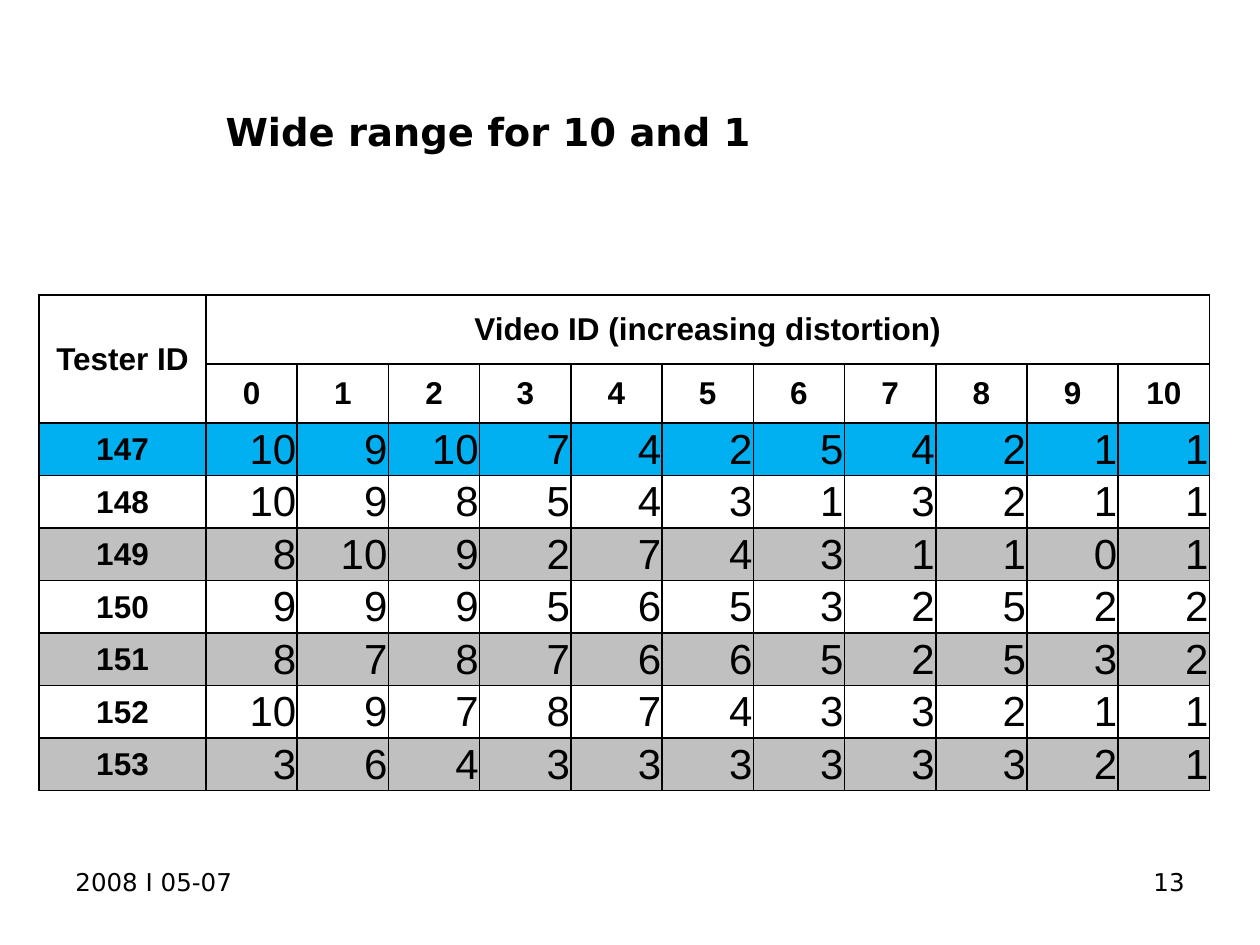
from lxml.etree import SubElement
from pptx import Presentation
from pptx.dml.color import RGBColor
from pptx.enum.text import MSO_ANCHOR as Anchor, PP_ALIGN as Align
from pptx.oxml.ns import qn
from pptx.util import Emu, Pt

EMU_PER_PX = 914400 / 126
COLORS = {"ink": "000000", "highlight": "00B0F0", "band": "C0C0C0"}

TITLE = {"name": "DejaVu Sans", "size": Pt(22), "bold": True}
FOOTER = {"name": "DejaVu Sans", "size": Pt(14), "bold": False}
HEADING = {"name": "Arial", "size": Pt(18), "bold": True}
SCORE = {"name": "Arial", "size": Pt(24), "bold": False}

# Scores by tester, one for each video from 0 to 10
RATINGS = {
    147: [10, 9, 10, 7, 4, 2, 5, 4, 2, 1, 1],
    148: [10, 9, 8, 5, 4, 3, 1, 3, 2, 1, 1],
    149: [8, 10, 9, 2, 7, 4, 3, 1, 1, 0, 1],
    150: [9, 9, 9, 5, 6, 5, 3, 2, 5, 2, 2],
    151: [8, 7, 8, 7, 6, 6, 5, 2, 5, 3, 2],
    152: [10, 9, 7, 8, 7, 4, 3, 3, 2, 1, 1],
    153: [3, 6, 4, 3, 3, 3, 3, 3, 3, 2, 1],
}
HIGHLIGHTED = 147
VIDEOS = range(11)
HEADER_HEIGHTS = [69, 59]
TESTER_WIDTH = 167


def px(length):
    return Emu(round(length * EMU_PER_PX))


def write(frame, text, style, align):
    para = frame.paragraphs[0]
    para.alignment = align
    span = para.add_run()
    span.text = text
    for name, value in style.items():
        setattr(span.font, name, value)
    span.font.color.rgb = RGBColor.from_string(COLORS["ink"])


def add_title(page, text, left, top, width, height):
    title = page.shapes.title
    title.left, title.top, title.width, title.height = map(px, (left, top, width, height))
    title.text_frame.vertical_anchor = Anchor.MIDDLE
    write(title.text_frame, text, TITLE, Align.LEFT)


def add_footer(page, text, left, align):
    box = page.shapes.add_textbox(px(left), px(861), px(294), px(66))
    box.text_frame.word_wrap = True
    write(box.text_frame, text, FOOTER, align)


def add_borders(cell, weights):
    properties = cell._tc.get_or_add_tcPr()
    for side, weight in weights.items():
        line = SubElement(properties, qn(f"a:ln{side}"), w=str(Pt(weight)))
        fill = SubElement(line, qn("a:solidFill"))
        SubElement(fill, qn("a:srgbClr"), val=COLORS["ink"])


def format_cell(cell, row, fill):
    layout = {"margin_left": px(1), "margin_top": px(1), "margin_right": px(1),
              "margin_bottom": 0, "vertical_anchor": Anchor.MIDDLE}
    for name, value in layout.items():
        setattr(cell, name, value)
    # The lines under the two header rows are heavier
    add_borders(cell, {"L": 1, "R": 1,
                       "T": 1.5 if row in (1, 2) else 1,
                       "B": 1.5 if row in (0, 1) else 1})
    if fill:
        cell.fill.solid()
        cell.fill.fore_color.rgb = RGBColor.from_string(COLORS[fill])
    else:
        cell.fill.background()


def row_fill(tester):
    if tester == HIGHLIGHTED:
        return "highlight"
    return "band" if tester % 2 else None


def add_ratings_table(page, left, top, width, height):
    testers = list(RATINGS)
    header_rows = len(HEADER_HEIGHTS)
    frame = page.shapes.add_table(header_rows + len(testers), 1 + len(VIDEOS),
                                  px(left), px(top), px(width), px(height))
    table = frame.table
    table.first_row = table.horz_banding = False

    # Even columns and rows after the header ones
    video_width = (width - TESTER_WIDTH) / len(VIDEOS)
    for column, size in zip(table.columns, [TESTER_WIDTH] + [video_width] * len(VIDEOS)):
        column.width = px(size)
    row_height = (height - sum(HEADER_HEIGHTS)) / len(testers)
    for row, size in zip(table.rows, HEADER_HEIGHTS + [row_height] * len(testers)):
        row.height = px(size)

    fills = [None] * header_rows + [row_fill(tester) for tester in testers]
    for index, (row, fill) in enumerate(zip(table.rows, fills)):
        for cell in row.cells:
            format_cell(cell, index, fill)

    # Headers
    table.cell(0, 0).merge(table.cell(1, 0))
    table.cell(0, 1).merge(table.cell(0, len(VIDEOS)))
    write(table.cell(0, 0).text_frame, "Tester ID", HEADING, Align.CENTER)
    write(table.cell(0, 1).text_frame, "Video ID (increasing distortion)",
          HEADING, Align.CENTER)
    for video in VIDEOS:
        write(table.cell(1, video + 1).text_frame, str(video), HEADING, Align.CENTER)

    # Scores
    for row, (tester, scores) in enumerate(RATINGS.items(), header_rows):
        write(table.cell(row, 0).text_frame, str(tester), HEADING, Align.CENTER)
        for column, score in enumerate(scores, 1):
            write(table.cell(row, column).text_frame, str(score), SCORE, Align.RIGHT)


def main():
    deck = Presentation()
    deck.slide_width, deck.slide_height = px(1260), px(945)
    page = deck.slides.add_slide(deck.slide_layouts.get_by_name("Title Only"))
    add_title(page, "Wide range for 10 and 1", 213, 66, 984, 130)
    add_footer(page, "2008 I 05-07", 63, Align.LEFT)
    add_footer(page, "13", 903, Align.RIGHT)
    add_ratings_table(page, 39, 295, 1171, 496)
    deck.save("out.pptx")


if __name__ == "__main__":
    main()
